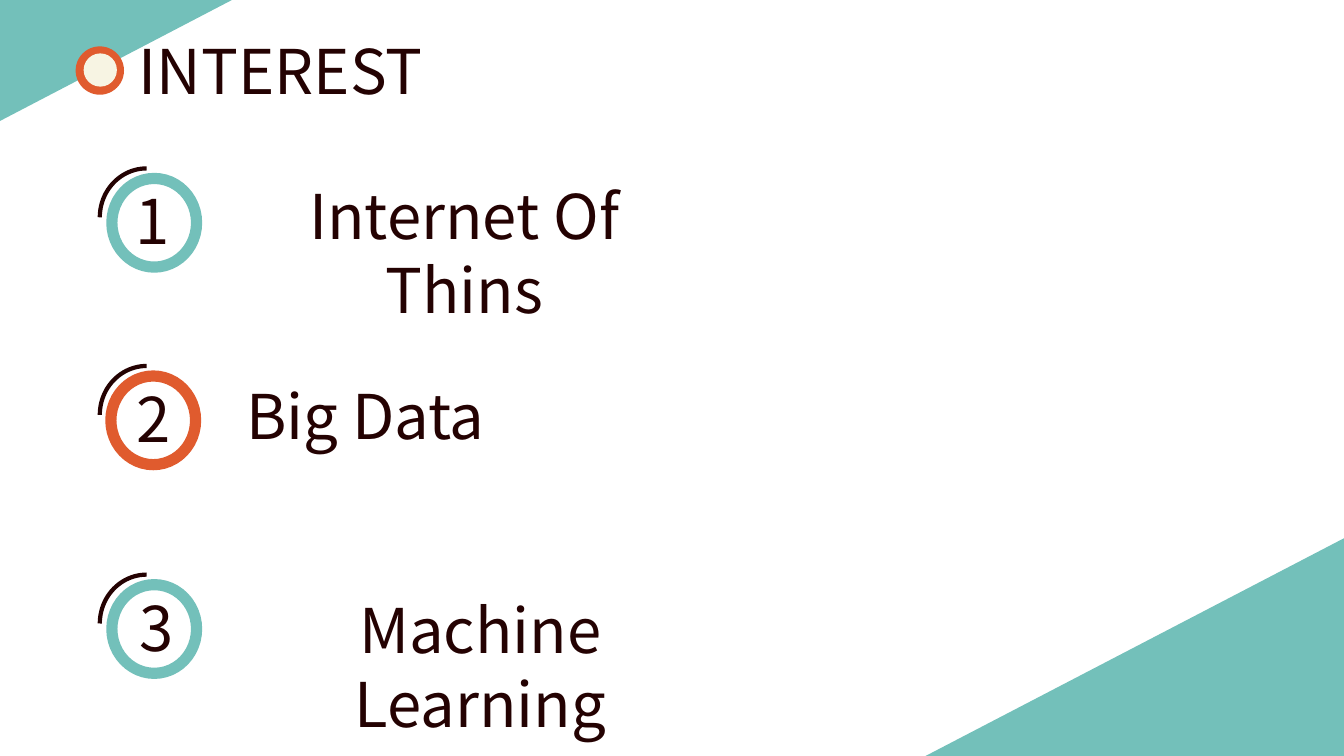
import pptx
import pptx.util
import pptx.dml.color
import pptx.enum.shapes
import pptx.enum.text

Inches = pptx.util.Inches
SHAPE = pptx.enum.shapes.MSO_SHAPE
TEAL, ORANGE, CREAM, DARK = "73C0BA", "E05B2E", "F7F4E3", "240202"


def rgb(value):
    return pptx.dml.color.RGBColor.from_string(value)


def write(tf, text, size=44, font="Noto Sans CJK KR", color=DARK,
          align=pptx.enum.text.PP_ALIGN.CENTER):
    tf.word_wrap = True
    tf.auto_size = pptx.enum.text.MSO_AUTO_SIZE.SHAPE_TO_FIT_TEXT
    tf.vertical_anchor = pptx.enum.text.MSO_ANCHOR.TOP
    p = tf.paragraphs[0]
    p.alignment = align
    r = p.add_run()
    r.text = text
    r.font.size = pptx.util.Pt(size)
    r.font.name = font
    r.font.color.rgb = rgb(color)


class Deck:
    def __init__(self):
        self.prs = pptx.Presentation()
        self.prs.slide_width = Inches(13.33)
        self.prs.slide_height = Inches(7.5)
        self.s = self.prs.slides.add_slide(self.prs.slide_layouts[5])
        self.s.background.fill.solid()
        self.s.background.fill.fore_color.rgb = rgb("FFFFFF")

    def group(self):
        return self.s.shapes.add_group_shape().shapes

    def title(self, text, *box):
        sp = self.s.shapes.title
        sp.left, sp.top, sp.width, sp.height = map(Inches, box)
        write(sp.text_frame, text)

    def text(self, text, *box, shapes=None):
        sp = (shapes or self.s.shapes).add_textbox(*map(Inches, box))
        write(sp.text_frame, text)

    def shape(self, kind, *box, fill=None, line=None, weight=1, rotation=0, shapes=None):
        sp = (shapes or self.s.shapes).add_shape(kind, *map(Inches, box))
        sp.shadow.inherit = False
        sp.rotation = rotation
        if fill:
            sp.fill.solid()
            sp.fill.fore_color.rgb = rgb(fill)
        else:
            sp.fill.background()
        if line:
            sp.line.color.rgb = rgb(line)
            sp.line.width = pptx.util.Pt(weight)
        else:
            sp.line.fill.background()
        return sp

    def corner(self, *box, rotation=0):
        sp = self.shape(SHAPE.ISOSCELES_TRIANGLE, *box, fill=TEAL, rotation=rotation)
        sp.adjustments[0] = 1

    def badge(self, number, top, ring_left, number_left, color):
        g = self.group()
        self.shape(SHAPE.OVAL, ring_left, top, 0.84, 0.88, line=color, weight=8, shapes=g)
        self.shape(SHAPE.ARC, 0.97, top - 0.08, 0.97, 0.93, line=DARK, weight=3,
                   rotation=270, shapes=g)
        self.text(str(number), number_left, top, 0.8, 0.88, shapes=g)


def main():
    deck = Deck()

    # Corner triangles
    deck.corner(9.18, 5.34, 4.15, 2.16)
    deck.corner(0, 0, 2.3, 1.2, rotation=180)

    # Title with its bullet
    deck.title("INTEREST", 1.23, 0.28, 3.11, 0.84)
    bullet = deck.group()
    deck.shape(SHAPE.OVAL, 0.75, 0.46, 0.48, 0.48, fill=ORANGE, shapes=bullet)
    deck.shape(SHAPE.OVAL, 0.83, 0.53, 0.33, 0.33, fill=CREAM, shapes=bullet)

    # Numbered interests: badge top, ring left, number left, colour, label top, label width
    interests = [
        ("Internet Of Thins", 1.77, 1.11, 1.11, TEAL, 1.72, 4.61),
        ("Big Data", 3.73, 1.1, 1.12, ORANGE, 3.7, 2.65),
        ("Machine Learning", 5.8, 1.11, 1.15, TEAL, 5.82, 4.93),
    ]
    for number, (label, top, ring_left, number_left, color, label_top, width) in enumerate(interests, 1):
        deck.badge(number, top, ring_left, number_left, color)
        deck.text(label, 2.3, label_top, width, 0.84)

    deck.prs.save("out.pptx")


if __name__ == "__main__":
    main()
